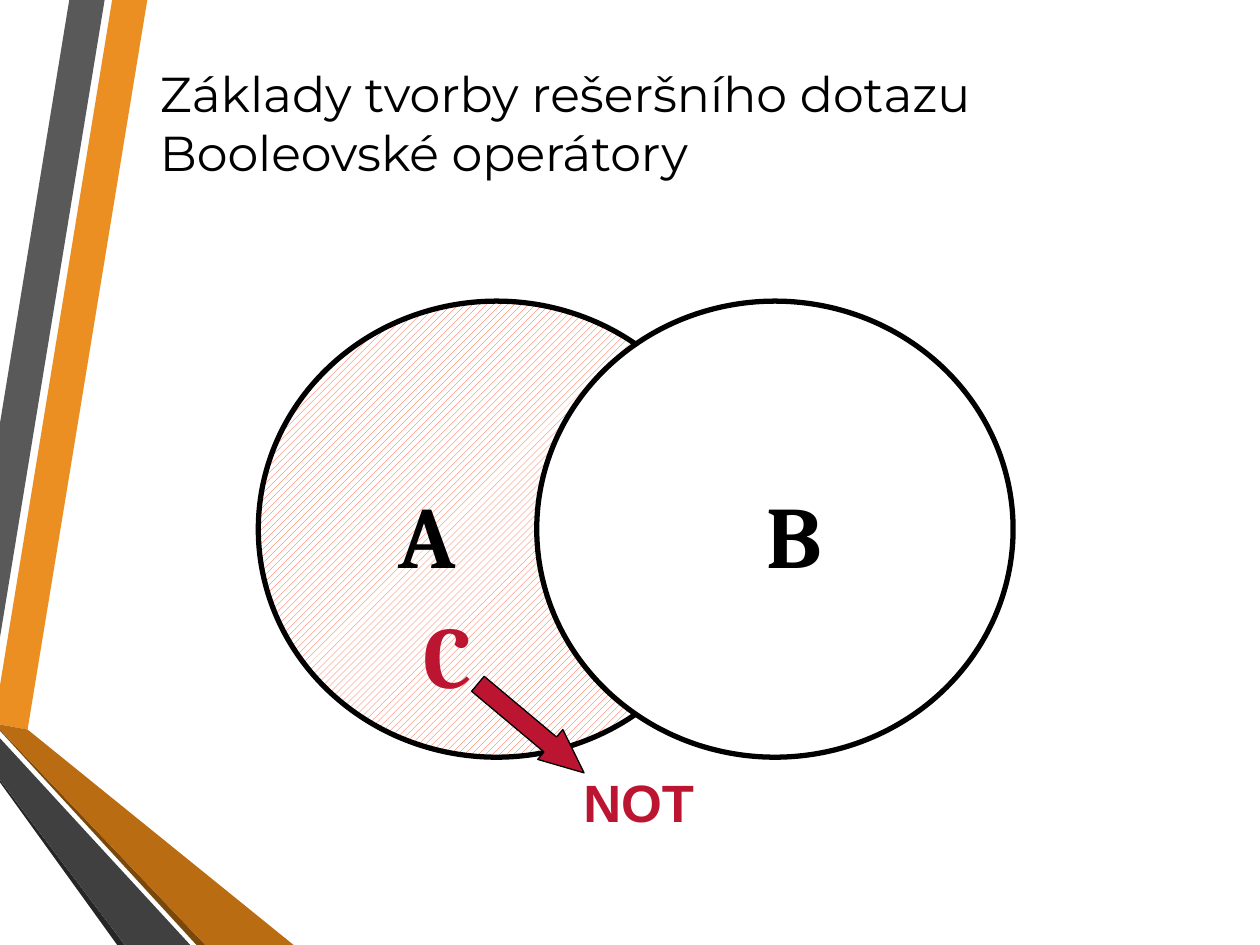
from dataclasses import dataclass

from pptx import Presentation
from pptx.dml.color import RGBColor
from pptx.enum.dml import MSO_PATTERN
from pptx.enum.shapes import MSO_SHAPE
from pptx.enum.text import MSO_ANCHOR, MSO_AUTO_SIZE, PP_ALIGN
from pptx.util import Pt

HATCH = MSO_PATTERN.WIDE_UPWARD_DIAGONAL
ELLIPSE, DOWN_ARROW = MSO_SHAPE.OVAL, MSO_SHAPE.DOWN_ARROW
LEFT, CENTER = PP_ALIGN.LEFT, PP_ALIGN.CENTER
MIDDLE = MSO_ANCHOR.MIDDLE
NO_FIT, FIT_SHAPE = MSO_AUTO_SIZE.NONE, MSO_AUTO_SIZE.SHAPE_TO_FIT_TEXT

TITLE_ONLY = 5
BLACK, WHITE, RED, HATCH_RED = "000000", "FFFFFF", "BB1531", "FE4A26"
LEVEL_INDENT = 36


@dataclass(frozen=True)
class Band:
    color: str
    corners: tuple[tuple[float, float], ...]


@dataclass(frozen=True)
class Label:
    text: str
    left: float
    top: float
    width: float = 67.7
    height: float = 67
    font: str = "Cambria"
    size: float = 50
    color: str = BLACK
    wrap: bool = True
    level: int = 0


BANDS = (
    Band("EB8F22", ((0, 391.7), (0, 414), (15.8, 416.9), (84.2, 0), (64.1, 0))),
    Band("595959", ((59.8, 0), (39.6, 0), (0, 241.9), (0, 364.3))),
    Band("262626", ((0, 445.7), (0, 447.1), (67, 540), (71.3, 540))),
    Band("7B480B", ((0, 416.9), (0, 417.6), (112.3, 540), (117.4, 540))),
    Band("B96C11", ((0, 416.9), (117.4, 540), (167.8, 540), (15.8, 416.9), (0, 414))),
    Band("404040", ((0, 445.7), (71.3, 540), (108.7, 540), (0, 421.9))),
)

LABELS = (
    Label("A", 210.2, 271.4),
    Label("B", 419.8, 271.4),
    Label("C", 221.8, 339.8, color=RED),
    Label("NOT", 289.4, 436.3, 115.2, 43.9, "Arial", 30, RED, wrap=False, level=1),
)


def rgb(color: str) -> RGBColor:
    return RGBColor.from_string(color)


def write(frame, text: str, *, font: str, size: float, color: str,
          bold: bool = False, align=LEFT, level: int = 0) -> None:
    frame.text = text
    paragraph = frame.paragraphs[0]
    paragraph.alignment = align
    if level:
        paragraph.level = level
        properties = paragraph._p.get_or_add_pPr()
        properties.set("marL", str(Pt(LEVEL_INDENT * level)))
        properties.set("indent", "0")
    for run in paragraph.runs:
        run.font.name = font
        run.font.size = Pt(size)
        run.font.bold = bold
        run.font.color.rgb = rgb(color)


def place(shape, left: float, top: float, width: float, height: float) -> None:
    shape.left, shape.top = Pt(left), Pt(top)
    shape.width, shape.height = Pt(width), Pt(height)


def draw_band(slide, band: Band) -> None:
    start, *rest = [(Pt(x), Pt(y)) for x, y in band.corners]
    builder = slide.shapes.build_freeform(*start)
    builder.add_line_segments(rest, close=True)
    shape = builder.convert_to_shape()
    shape.shadow.inherit = False
    shape.fill.solid()
    shape.fill.fore_color.rgb = rgb(band.color)
    shape.line.fill.background()


def draw_outlined(slide, kind, left: float, top: float, width: float,
                  height: float, *, fill: str, line_width: float,
                  hatched: bool = False):
    shape = slide.shapes.add_shape(kind, Pt(left), Pt(top), Pt(width), Pt(height))
    shape.shadow.inherit = False
    if hatched:
        shape.fill.patterned()
        shape.fill.pattern = HATCH
        shape.fill.back_color.rgb = rgb(WHITE)
    else:
        shape.fill.solid()
    shape.fill.fore_color.rgb = rgb(fill)
    shape.line.color.rgb = rgb(BLACK)
    shape.line.width = Pt(line_width)
    return shape


def draw_label(slide, label: Label) -> None:
    box = slide.shapes.add_textbox(
        Pt(label.left), Pt(label.top), Pt(label.width), Pt(label.height))
    frame = box.text_frame
    frame.word_wrap = label.wrap
    frame.auto_size = FIT_SHAPE
    write(frame, label.text, font=label.font, size=label.size, color=label.color,
          bold=True, align=CENTER, level=label.level)


def main() -> None:
    deck = Presentation()
    deck.slide_width, deck.slide_height = Pt(720), Pt(540)
    slide = deck.slides.add_slide(deck.slide_layouts[TITLE_ONLY])

    for band in BANDS:
        draw_band(slide, band)

    title = slide.shapes.title
    place(title, 84.2, 36, 607, 67.7)
    title.text_frame.vertical_anchor = MIDDLE
    title.text_frame.auto_size = NO_FIT
    write(title.text_frame, "Základy tvorby rešeršního dotazu\vBooleovské operátory",
          font="Montserrat", size=28, color=BLACK)

    circle_top, circle_width, circle_height = 172.1, 272.2, 260.6
    draw_outlined(slide, ELLIPSE, 147.6, circle_top, circle_width, circle_height,
                  fill=HATCH_RED, line_width=3, hatched=True)
    draw_outlined(slide, ELLIPSE, 306.7, circle_top, circle_width, circle_height,
                  fill=WHITE, line_width=3)

    arrow = draw_outlined(slide, DOWN_ARROW, 292.3, 376.6, 22.3, 79.2,
                          fill=RED, line_width=0.75)
    arrow.adjustments[0], arrow.adjustments[1] = 0.5, 1.13
    arrow.rotation = 310

    for label in LABELS:
        draw_label(slide, label)

    deck.save("out.pptx")


if __name__ == "__main__":
    main()
